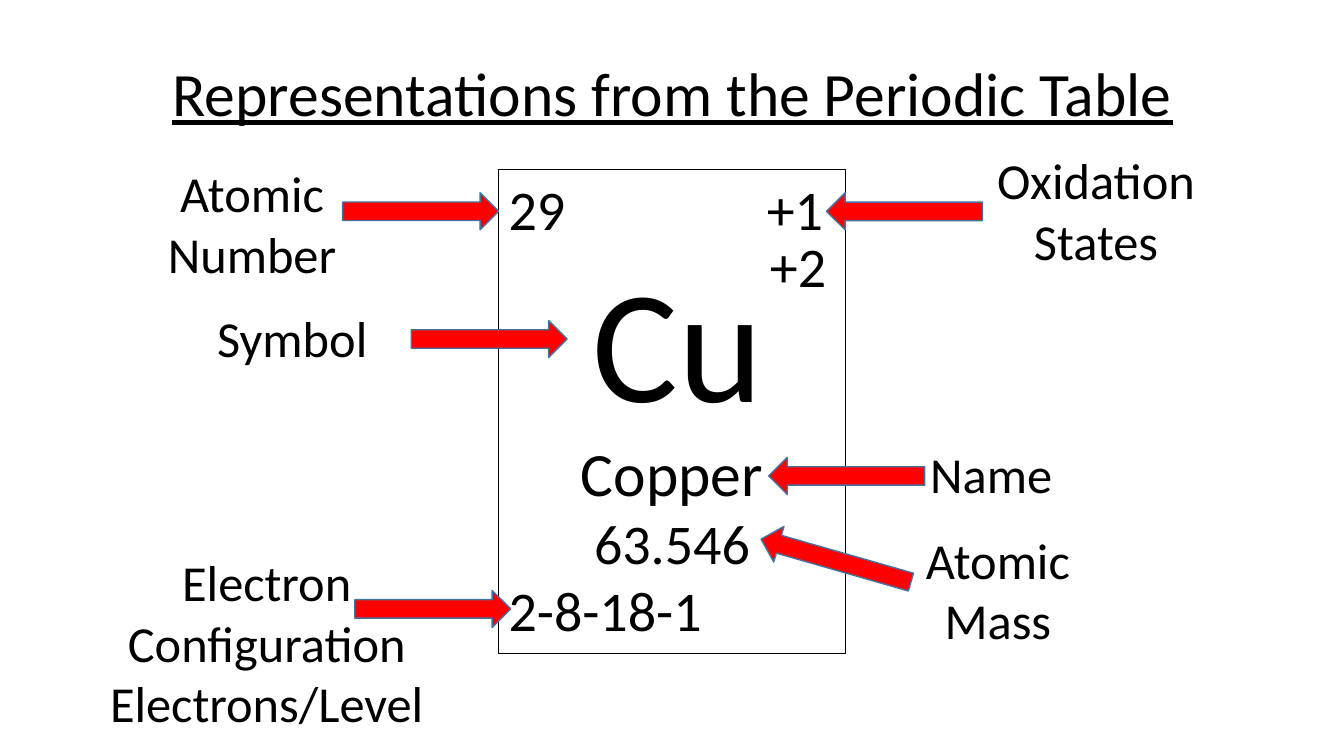
from lxml.etree import SubElement
from pptx import Presentation
from pptx.dml.color import RGBColor
from pptx.enum.shapes import MSO_SHAPE as Preset
from pptx.enum.text import MSO_ANCHOR as Anchor, PP_ALIGN as Align
from pptx.oxml.ns import qn
from pptx.util import Inches, Pt

deck = Presentation()
deck.slide_width, deck.slide_height = Inches(13.33), Inches(7.5)
COLUMN, ROW = deck.slide_width / 100, deck.slide_height / 100
slide = deck.slides.add_slide(deck.slide_layouts[6])


def place(preset, left, top, width, height, fill=None, line=None, weight=1):
    """Add a shape, or a text box if preset is None, in hundredths of the slide."""
    box = [int(left * COLUMN), int(top * ROW), int(width * COLUMN), int(height * ROW)]
    if preset is None:
        shape = slide.shapes.add_textbox(*box)
    else:
        shape = slide.shapes.add_shape(preset, *box)
        shape.shadow.inherit = False
        shape.fill.solid()
        shape.fill.fore_color.rgb = RGBColor.from_string(fill)
        shape.line.color.rgb = RGBColor.from_string(line)
        shape.line.width = Pt(weight)
    shape.text_frame.word_wrap = True
    return shape


def write(shape, lines, anchor=Anchor.TOP, **font):
    """Fill a shape with (text, size, alignment) paragraphs."""
    frame = shape.text_frame
    frame.vertical_anchor = anchor
    for i, (text, size, align) in enumerate(lines):
        paragraph = frame.add_paragraph() if i else frame.paragraphs[0]
        paragraph.alignment = align
        run = paragraph.add_run()
        run.text = text
        run.font.color.rgb = RGBColor.from_string("000000")
        for key, value in {"name": "Calibri", "size": Pt(size), **font}.items():
            setattr(run.font, key, value)
    return frame.paragraphs


title = place(None, 6.9, 3.1, 86.3, 19.3)
heading = [("Representations from the Periodic Table", 44, Align.CENTER)]
write(title, heading, Anchor.MIDDLE, underline=True)[0].line_spacing = 0.9

element_card = place(Preset.RECTANGLE, 37.1, 22.4, 25.8, 64, "FFFFFF", "000000", 0.75)
number_line, symbol_line, *_ = write(element_card, [
    ("29\t+1", 40, Align.LEFT),
    ("Cu", 115, Align.LEFT),
    ("Copper", 44, Align.CENTER),
    ("63.546", 40, Align.CENTER),
    ("2-8-18-1", 40, Align.LEFT),
])
# Right tab for the oxidation state, left indent for the symbol
tabs = SubElement(number_line._p.get_or_add_pPr(), qn("a:tabLst"))
SubElement(tabs, qn("a:tab"), pos=str(Inches(3.12)), algn="r")
symbol_line._p.get_or_add_pPr().set("marL", str(Inches(0.83)))

for left, top, turn in [
    (25.5, 25.5, 0),     # atomic number
    (30.6, 42.4, 0),     # symbol
    (26.4, 78.1, 0),     # electron configuration
    (61.5, 25.5, 180),   # oxidation states
    (57.2, 60.5, 180),   # name
    (56.4, 71.7, 196),   # atomic mass
]:
    arrow = place(Preset.RIGHT_ARROW, left, top, 11.6, 4.9, "FF0000", "43739E")
    arrow.rotation = turn

# Label lines, rows they take, then left, top and width
for lines, rows, left, top, width in [
    (["Oxidation", "States"], 2, 72.2, 19.1, 18.7),
    (["Name"], 1, 64.4, 57.9, 18.7),
    (["Atomic Mass"], 2, 64.9, 69.3, 18.7),
    (["Atomic Number"], 2, 9.4, 20.8, 18.7),
    (["Symbol"], 1, 12.4, 40, 18.7),
    (["Electron", "Configuration", "Electrons/Level"], 3, 6.75, 72.3, 26.2),
]:
    label = place(None, left, top, width, 8 * rows + 1.5)
    write(label, [(line, 36, Align.CENTER) for line in lines])

second_state = place(None, 56.55, 30, 7.1, 10.3)
write(second_state, [("+2", 40, Align.LEFT)])

deck.save("out.pptx")
